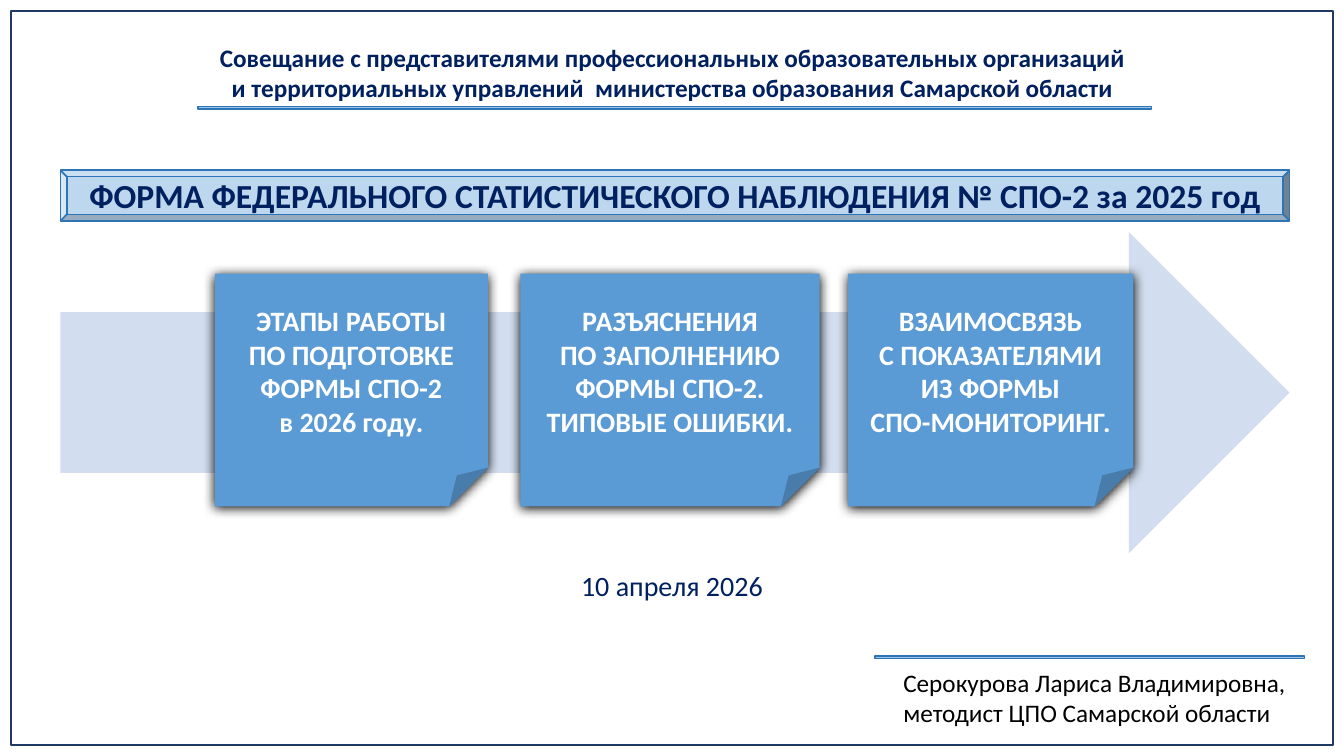
from lxml.etree import SubElement
from pptx import Presentation
from pptx.dml.color import RGBColor
from pptx.enum.shapes import MSO_SHAPE as SHAPE
from pptx.enum.text import MSO_ANCHOR as ANCHOR, MSO_AUTO_SIZE as AUTO, PP_ALIGN as ALIGN
from pptx.oxml.ns import qn
from pptx.util import Inches, Pt

COLORS = {
    "frame": "203864", "navy": "002060", "banner": "BDD7EE", "edge": "2E75B6",
    "rule": "9DC3E6", "arrow": "D2DEEF", "card": "5B9BD5", "white": "FFFFFF",
    "black": "000000",
}
FONT = "Calibri"
CARDS = [
    (12.55, 22.23, 0.08, ["ЭТАПЫ РАБОТЫ", "ПО ПОДГОТОВКЕ ФОРМЫ СПО-2", "в 2026 году."]),
    (37.41, 24.36, 0.08, ["РАЗЪЯСНЕНИЯ", "ПО ЗАПОЛНЕНИЮ", "ФОРМЫ СПО-2. ТИПОВЫЕ ОШИБКИ."]),
    (64.07, 23.22, 0, ["ВЗАИМОСВЯЗЬ", "С ПОКАЗАТЕЛЯМИ\vИЗ ФОРМЫ", "СПО-МОНИТОРИНГ."]),
]


def rgb(name):
    return RGBColor.from_string(COLORS[name])


def part(box, x, y, w, h):
    left, top, width, height = box
    return (int(left + width * x / 100), int(top + height * y / 100),
            int(width * w / 100), int(height * h / 100))


def add_shape(s, kind, box, fill=None, line=None, weight=1):
    sp = s.shapes.add_shape(kind, *box)
    sp.shadow.inherit = False
    if fill:
        sp.fill.solid()
        sp.fill.fore_color.rgb = rgb(fill)
    else:
        sp.fill.background()
    if line:
        sp.line.color.rgb = rgb(line)
        sp.line.width = Pt(weight)
    else:
        sp.line.fill.background()
    return sp


def write(tf, lines, size, color, bold=False, align=ALIGN.CENTER, wrap=True):
    tf.word_wrap = wrap
    tf.text = "\n".join(lines)
    for p in tf.paragraphs:
        p.alignment = align
        for r in p.runs:
            r.font.name = FONT
            r.font.size = Pt(size)
            r.font.bold = bold
            r.font.color.rgb = rgb(color)


def add_text(s, box, lines, size, color, **style):
    tf = s.shapes.add_textbox(*box).text_frame
    write(tf, lines, size, color, **style)
    return tf


def set_margins(tf, side, end):
    tf.margin_left = tf.margin_right = Inches(side)
    tf.margin_top = tf.margin_bottom = Inches(end)


def add_rule(s, box):
    add_shape(s, SHAPE.MATH_MINUS, box, "rule", "edge")


def add_shadow(sp):
    effects = sp._element.spPr.find(qn("a:effectLst"))
    shadow = SubElement(effects, qn("a:outerShdw"), blurRad=str(Pt(8.5)),
                        dist=str(Pt(1)), dir="5400000", algn="ctr", rotWithShape="0")
    SubElement(shadow, qn("a:srgbClr"), val=COLORS["black"])


def heading(s, page):
    add_text(s, part(page, 15.3, 4.93, 69.47, 9.47),
             ["Совещание с представителями профессиональных образовательных организаций",
              "и территориальных управлений  министерства образования Самарской области"],
             18, "navy", bold=True, wrap=False)
    add_rule(s, part(page, 1.95, 13.6, 96.55, 1.33))


def banner(s, box):
    add_shape(s, SHAPE.BEVEL, box, "banner", "edge", 1.25)
    title = s.shapes.title
    title.left, title.top, title.width, title.height = box
    tf = title.text_frame
    tf.auto_size = AUTO.NONE
    tf.vertical_anchor = ANCHOR.MIDDLE
    set_margins(tf, 0.1, 0.05)
    write(tf, ["ФОРМА ФЕДЕРАЛЬНОГО СТАТИСТИЧЕСКОГО НАБЛЮДЕНИЯ № СПО-2 за 2025 год"],
          24, "navy", bold=True)
    s.shapes._spTree.append(title._element)


def card(s, box, margin, lines):
    add_shadow(add_shape(s, SHAPE.FOLDED_CORNER, box, "card"))
    tf = add_text(s, part(box, 0, 0, 100, 83.5), lines, 20, "white", bold=True)
    tf.vertical_anchor = ANCHOR.MIDDLE
    set_margins(tf, margin, 0.08)


def process(s, box):
    add_shape(s, SHAPE.RIGHT_ARROW, box, "arrow")
    for x, w, margin, lines in CARDS:
        card(s, part(box, x, 13, w, 72.4), margin, lines)


def footer(s, page):
    add_text(s, part(page, 30.76, 74.53, 38.48, 5.87), ["10 апреля 2026"], 20, "navy")
    add_rule(s, part(page, 59.34, 86.27, 43.51, 1.33))
    add_text(s, part(page, 66.47, 87.6, 30.5, 9.47),
             ["Серокурова Лариса Владимировна,", "методист ЦПО Самарской области"],
             18, "black", align=ALIGN.LEFT)


def main():
    prs = Presentation()
    prs.slide_width, prs.slide_height = Inches(13.33), Inches(7.5)
    s = prs.slides.add_slide(prs.slide_layouts[5])
    page = (0, 0, prs.slide_width, prs.slide_height)
    add_shape(s, SHAPE.RECTANGLE, part(page, 0.83, 1.47, 98.35, 97.07), line="frame", weight=1.5)
    heading(s, page)
    banner(s, part(page, 4.5, 22.53, 91.45, 6.67))
    process(s, part(page, 4.5, 30.67, 91.45, 42.53))
    footer(s, page)
    prs.save("out.pptx")


if __name__ == "__main__":
    main()
